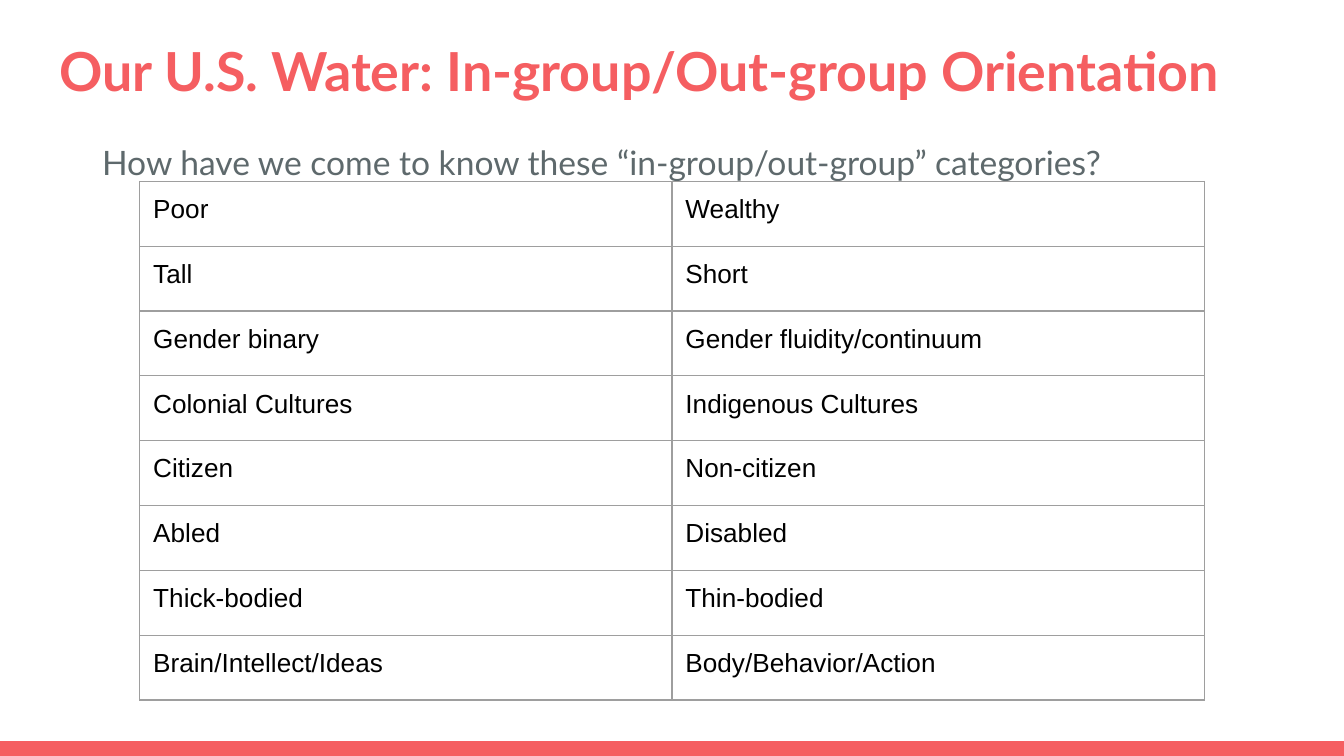
"""Build a slide that sets in-group and out-group categories side by side."""
from lxml import etree
from pptx import Presentation
from pptx.dml.color import RGBColor
from pptx.enum.shapes import MSO_SHAPE
from pptx.enum.text import MSO_ANCHOR, MSO_AUTO_SIZE, PP_ALIGN
from pptx.oxml.ns import qn
from pptx.util import Inches, Pt

RECTANGLE = MSO_SHAPE.RECTANGLE
TOP = MSO_ANCHOR.TOP
NO_FIT = MSO_AUTO_SIZE.NONE
LEFT = PP_ALIGN.LEFT

CORAL = RGBColor(0xF5, 0x5E, 0x61)
SLATE = RGBColor(0x5E, 0x69, 0x6C)
GREY = RGBColor(0x9E, 0x9E, 0x9E)
BLACK = RGBColor(0, 0, 0)

PAGE_WIDTH = Inches(10)
PAGE_HEIGHT = PAGE_WIDTH * 9 // 16

TITLE_FONT = {"name": "Lato", "size": Pt(28.8), "bold": True}
BODY_FONT = {"name": "Lato", "size": Pt(18), "bold": False}
CELL_FONT = {"name": "Arial", "size": Pt(14), "bold": False}
MARGINS = {f"margin_{side}": Inches(0.1) for side in ("left", "top", "right", "bottom")}
FRAME = {**MARGINS, "word_wrap": True, "auto_size": NO_FIT, "vertical_anchor": TOP}

CATEGORIES = [
    ("Poor", "Wealthy"),
    ("Tall", "Short"),
    ("Gender binary", "Gender fluidity/continuum"),
    ("Colonial Cultures", "Indigenous Cultures"),
    ("Citizen", "Non-citizen"),
    ("Abled", "Disabled"),
    ("Thick-bodied", "Thin-bodied"),
    ("Brain/Intellect/Ideas", "Body/Behavior/Action"),
]


def apply_format(target, values):
    """Set each named attribute of the target."""
    for name, value in values.items():
        setattr(target, name, value)


def write_text(para, text, font, color):
    """Write one formatted span into a paragraph."""
    span = para.add_run()
    span.text = text
    apply_format(span.font, font)
    span.font.color.rgb = color


def fill_placeholder(box, place, text, font, color, spacing):
    """Move a placeholder and give it one plain left-aligned paragraph."""
    names = ("left", "top", "width", "height")
    apply_format(box, dict(zip(names, map(Inches, place))))
    apply_format(box.text_frame, FRAME)
    para = box.text_frame.paragraphs[0]
    apply_format(para, {"alignment": LEFT, "line_spacing": spacing, "space_before": Pt(0)})
    properties = para._p.get_or_add_pPr()
    properties.set("marL", "0")
    properties.set("indent", "0")
    etree.SubElement(properties, qn("a:buNone"))
    write_text(para, text, font, color)


def add_bar(page):
    """Add the coral bar along the foot of the page."""
    height = Inches(0.11)
    bar = page.shapes.add_shape(RECTANGLE, 0, PAGE_HEIGHT - height, PAGE_WIDTH, height)
    bar.shadow.inherit = False
    bar.fill.solid()
    bar.fill.fore_color.rgb = CORAL
    bar.line.fill.background()


def add_borders(cell):
    """Draw a thin grey line on all four sides of a cell."""
    properties = cell._tc.get_or_add_tcPr()
    for side in ("lnL", "lnR", "lnT", "lnB"):
        line = etree.SubElement(properties, qn(f"a:{side}"), w=str(Pt(0.75)))
        fill = etree.SubElement(line, qn("a:solidFill"))
        etree.SubElement(fill, qn("a:srgbClr"), val=str(GREY))


def add_category_table(page):
    """Add the two-column table of paired categories."""
    table = page.shapes.add_table(
        len(CATEGORIES), 2, Inches(1.04), Inches(1.35), Inches(7.92), Inches(3.86)
    ).table
    apply_format(table, {"first_row": False, "horz_banding": False})
    for row, pair in enumerate(CATEGORIES):
        for column, text in enumerate(pair):
            cell = table.cell(row, column)
            apply_format(cell, {**MARGINS, "vertical_anchor": TOP})
            add_borders(cell)
            cell.fill.background()
            write_text(cell.text_frame.paragraphs[0], text, CELL_FONT, BLACK)


def main():
    """Build and save the deck."""
    deck = Presentation()
    apply_format(deck, {"slide_width": PAGE_WIDTH, "slide_height": PAGE_HEIGHT})
    page = deck.slides.add_slide(deck.slide_layouts[1])
    add_bar(page)
    fill_placeholder(
        page.shapes.title, (0.34, 0.18, 9.32, 0.72),
        "Our U.S. Water: In-group/Out-group Orientation", TITLE_FONT, CORAL, 1.0,
    )
    fill_placeholder(
        page.placeholders[1], (0.66, 0.91, 8.69, 4.51),
        "How have we come to know these “in-group/out-group” categories?",
        BODY_FONT, SLATE, 1.15,
    )
    add_category_table(page)
    deck.save("out.pptx")


if __name__ == "__main__":
    main()
